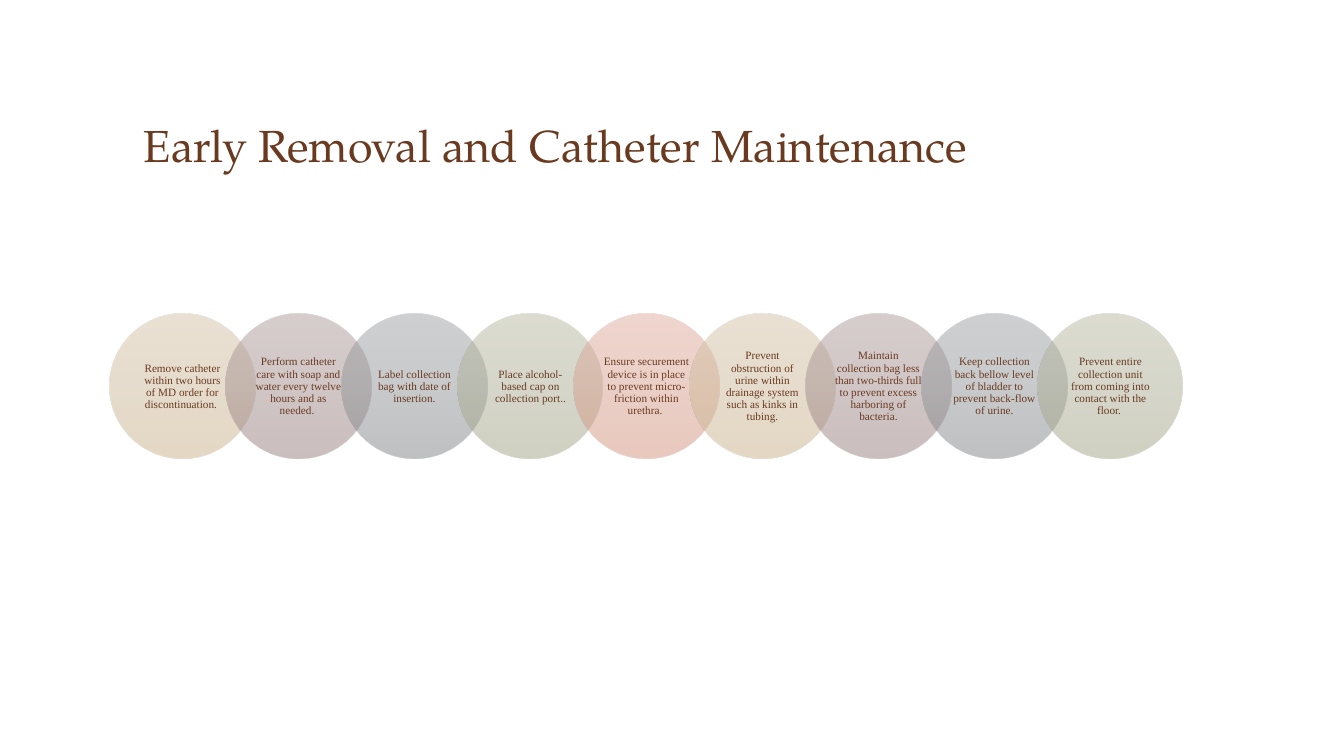
from lxml import etree
from pptx import Presentation
from pptx import util as u
from pptx.dml.color import RGBColor
from pptx.enum import shapes, text
from pptx.oxml.ns import qn

# Content
TITLE = "Early Removal and Catheter Maintenance"
SERIF, DISPLAY = "Times New Roman", "TeX Gyre Pagella"
BROWN = "6A3A20"
STEPS = [
    [("Remove catheter within two hours of MD order for discontinuation. ", SERIF)],
    [("Perform catheter care with soap and water every twelve hours and as needed. ", SERIF)],
    [("Label collection bag with date of insertion.", SERIF)],
    [("Place alcohol-based cap on collection port", SERIF), (".", DISPLAY), (".", SERIF)],
    [("Ensure securement device is in place to prevent micro-friction within urethra. ", SERIF)],
    [("Prevent obstruction of urine within drainage system such as kinks in tubing.", SERIF)],
    [("Maintain collection bag less than two-thirds full to prevent excess harboring of bacteria.", SERIF)],
    [("Keep collection back bellow level of bladder to prevent back-flow of urine.", SERIF)],
    [("Prevent entire collection unit from coming into contact with the floor. ", SERIF)],
]
# Top, middle and bottom colour of each circle; the five sets repeat
GRADIENTS = [
    ("D6C4AA", "CFBB9D", "CBB28B"),
    ("B09D9D", "A49090", "977C7C"),
    ("A0A2A5", "939699", "808387"),
    ("BABBA4", "AEAF98", "A3A485"),
    ("E1AE9E", "D7A291", "D5937C"),
]

# Layout in px
SLIDE_W, SLIDE_H = 1344, 756
TITLE_BOX = (134, 47, 1075, 129)
CHAIN_LEFT, CHAIN_TOP, CHAIN_STEP = 110, 314, 116
DIAMETER, LABEL_INSET = 145, 21
LABEL_SIZE = DIAMETER - 2 * LABEL_INSET
EMU_PER_PX = 12192000 / SLIDE_W


def px(length):
    return u.Emu(round(length * EMU_PER_PX))


def color(hex_code):
    return RGBColor.from_string(hex_code)


def add_text(container, box, runs, size, anchor, margins):
    shape = container.add_textbox(*map(px, box))
    frame = shape.text_frame
    frame.word_wrap = True
    frame.vertical_anchor = anchor
    frame.margin_left = frame.margin_right = px(margins[0])
    frame.margin_top = frame.margin_bottom = px(margins[1])
    paragraph = frame.paragraphs[0]
    for words, font_name in runs:
        run = paragraph.add_run()
        run.text = words
        run.font.name = font_name
        run.font.size = u.Pt(size)
        run.font.color.rgb = color(BROWN)
    return paragraph


def add_circle(container, left, top, gradient):
    shape = container.add_shape(shapes.MSO_SHAPE.OVAL, px(left), px(top), px(DIAMETER), px(DIAMETER))
    shape.shadow.inherit = False
    shape.line.fill.background()
    shape.fill.gradient()
    shape.fill.gradient_angle = 270
    # Three half-transparent stops
    stops = shape.element.spPr.find(".//" + qn("a:gsLst"))
    stops.clear()
    for position, hex_code in zip((0, 50000, 100000), gradient):
        stop = etree.SubElement(stops, qn("a:gs"), pos=str(position))
        tint = etree.SubElement(stop, qn("a:srgbClr"), val=hex_code)
        etree.SubElement(tint, qn("a:alpha"), val="50000")


def main():
    presentation = Presentation()
    presentation.slide_width, presentation.slide_height = px(SLIDE_W), px(SLIDE_H)
    slide = presentation.slides.add_slide(presentation.slide_layouts[6])

    # Title
    add_text(slide.shapes, TITLE_BOX, [(TITLE, DISPLAY)], 32, text.MSO_ANCHOR.BOTTOM, (10, 5))

    # Chain of overlapping circles, each with its label
    chain = slide.shapes.add_group_shape().shapes
    for index, runs in enumerate(STEPS):
        left = CHAIN_LEFT + index * CHAIN_STEP
        add_circle(chain, left, CHAIN_TOP, GRADIENTS[index % len(GRADIENTS)])
        label_box = (left + LABEL_INSET, CHAIN_TOP + LABEL_INSET, LABEL_SIZE, LABEL_SIZE)
        paragraph = add_text(chain, label_box, runs, 8, text.MSO_ANCHOR.MIDDLE, (8, 1))
        paragraph.alignment = text.PP_ALIGN.CENTER
        paragraph.line_spacing = 0.9

    presentation.save("out.pptx")


if __name__ == "__main__":
    main()
